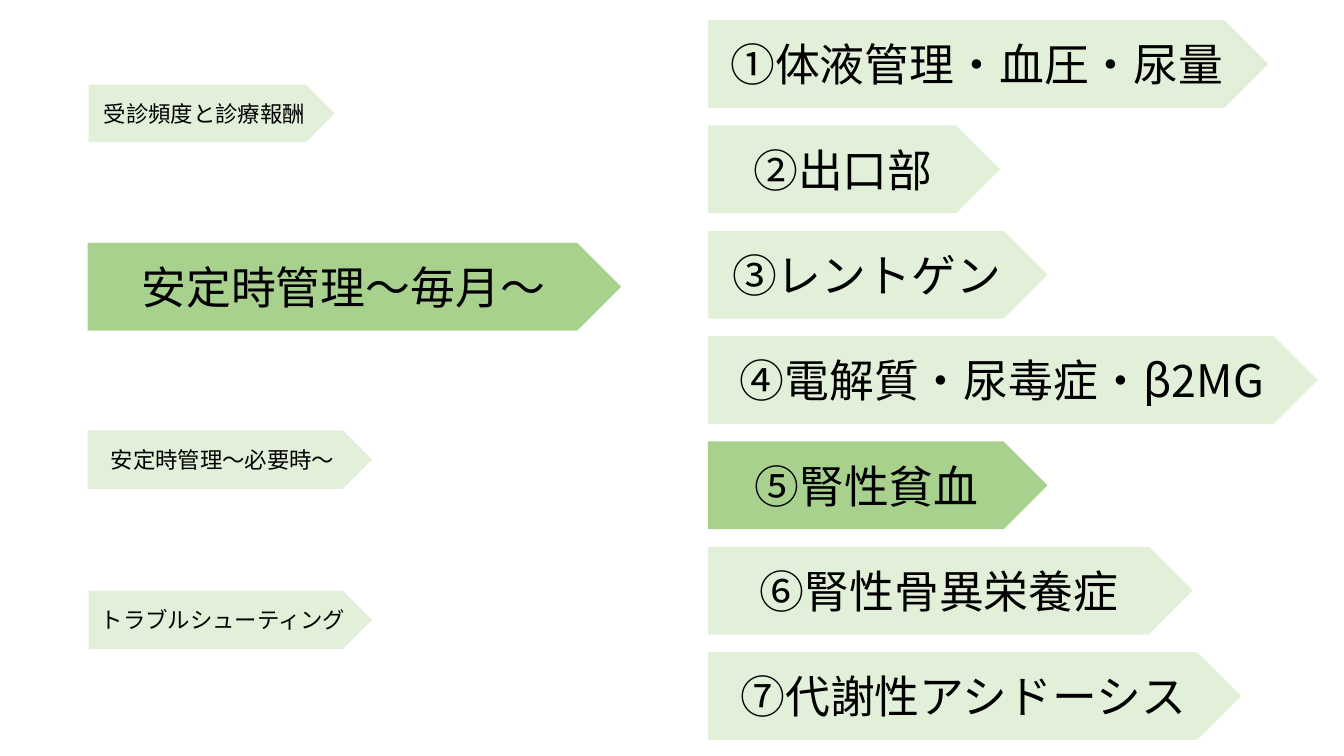
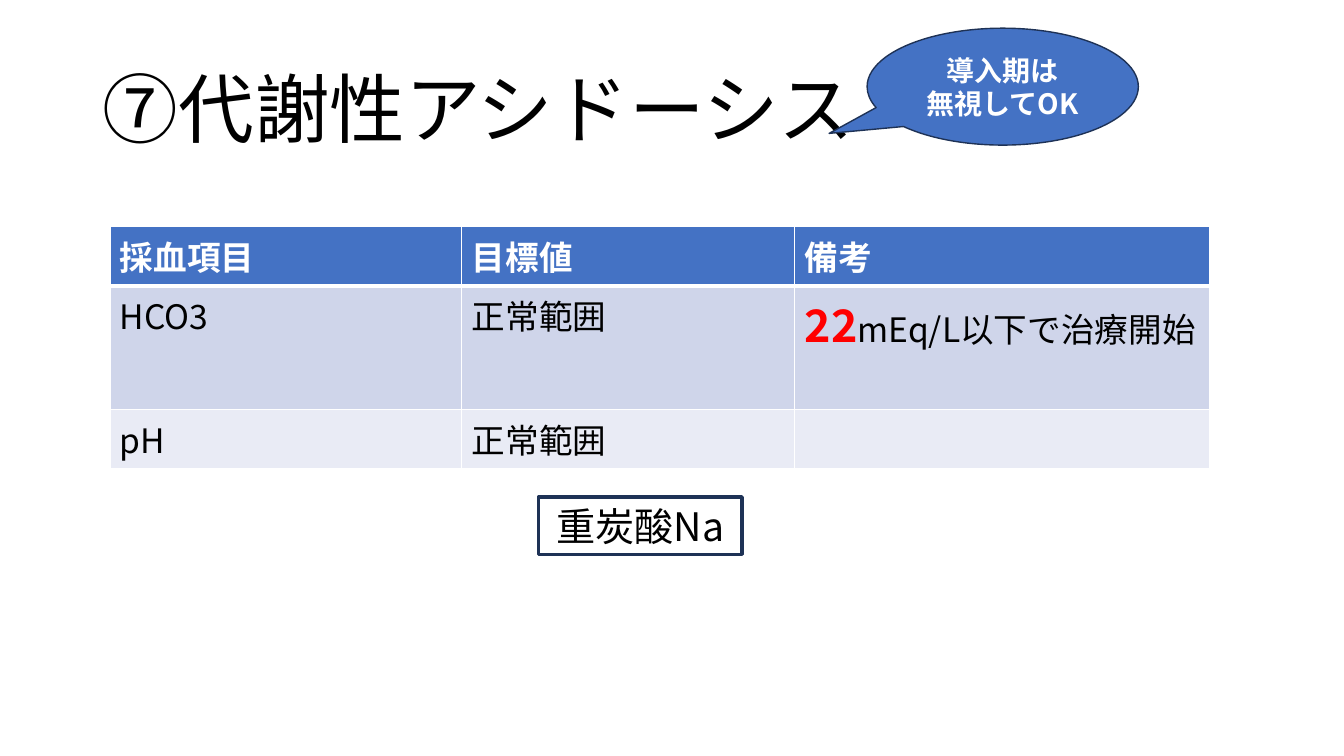
from dataclasses import dataclass

from lxml import etree
from pptx import Presentation
from pptx.dml.color import RGBColor
from pptx.enum.shapes import MSO_SHAPE
from pptx.enum.text import MSO_ANCHOR, MSO_AUTO_SIZE, PP_ALIGN
from pptx.oxml.ns import qn
from pptx.util import Inches, Pt

ARROW = MSO_SHAPE.PENTAGON
CALLOUT = MSO_SHAPE.OVAL_CALLOUT
RECTANGLE = MSO_SHAPE.RECTANGLE
LEFT, CENTER = PP_ALIGN.LEFT, PP_ALIGN.CENTER
TOP, MIDDLE = MSO_ANCHOR.TOP, MSO_ANCHOR.MIDDLE


@dataclass(frozen=True)
class Theme:
    font: str = "Noto Sans CJK JP"
    ink: str = "000000"
    white: str = "FFFFFF"
    alert: str = "FF0000"
    pale_green: str = "E2F0D9"
    green: str = "A9D18E"
    blue: str = "4472C4"
    navy: str = "1E3256"
    row_fills: tuple = ("4472C4", "CFD5EA", "E9EBF5")
    title: int = 54
    large: int = 32
    drug: int = 28
    table: int = 24
    callout: int = 20
    small: int = 16


THEME = Theme()


def write_text(frame, paragraphs, align=CENTER, anchor=MIDDLE):
    """Fill a frame; each paragraph is a list of (text, size, colour, bold) runs."""
    frame.vertical_anchor = anchor
    for index, runs in enumerate(paragraphs):
        para = frame.add_paragraph() if index else frame.paragraphs[0]
        para.alignment = align
        for text, size, color, bold in runs:
            span = para.add_run()
            span.text = text
            style = {"name": THEME.font, "size": Pt(size), "bold": bold}
            for name, value in style.items():
                setattr(span.font, name, value)
            span.font.color.rgb = RGBColor.from_string(color)
            latin = span.font._element.find(qn("a:latin"))
            east_asian = etree.Element(qn("a:ea"), typeface=THEME.font)
            latin.addnext(east_asian)


def add_box(page, kind, place, fill=None, line=None, line_width=1):
    box = page.shapes.add_shape(kind, *map(Inches, place))
    box.shadow.inherit = False
    if fill:
        box.fill.solid()
        box.fill.fore_color.rgb = RGBColor.from_string(fill)
    else:
        box.fill.background()
    if line:
        box.line.color.rgb = RGBColor.from_string(line)
        box.line.width = Pt(line_width)
    else:
        box.line.fill.background()
    return box


deck = Presentation()
deck.slide_width, deck.slide_height = Inches(13.33), Inches(7.5)
TITLE_ONLY, BLANK = deck.slide_layouts[5], deck.slide_layouts[6]
ACIDOSIS = "⑦代謝性アシドーシス"

# Slide 1: chapters on the left, topics of the current chapter on the right
page = deck.slides.add_slide(BLANK)
BAR_HEIGHT = 0.87
chapters = [
    ("受診頻度と診療報酬", (0.88, 0.84, 2.44, 0.57), False),
    ("安定時管理〜毎月〜", (0.87, 2.41, 5.29, BAR_HEIGHT), True),
    ("安定時管理〜必要時〜", (0.87, 4.27, 2.82, 0.58), False),
    ("トラブルシューティング", (0.88, 5.86, 2.81, 0.58), False),
]
topics = [
    ("①体液管理・血圧・尿量", 5.56),
    ("②出口部", 2.9),
    ("③レントゲン", 3.37),
    ("④電解質・尿毒症・β2MG", 6.05),
    ("⑤腎性貧血", 3.37),
    ("⑥腎性骨異栄養症", 4.81),
    (ACIDOSIS, 5.29),
]
CURRENT_TOPIC = "⑤腎性貧血"
FIRST_TOP, LAST_TOP = 0.2, 6.47
step = (LAST_TOP - FIRST_TOP) / (len(topics) - 1)

bars = [
    (text, place, current, THEME.large if current else THEME.small)
    for text, place, current in chapters
]
for index, (text, width) in enumerate(topics):
    place = (7.02, FIRST_TOP + index * step, width, BAR_HEIGHT)
    bars.append((text, place, text == CURRENT_TOPIC, THEME.large))

for text, place, current, size in bars:
    bar = add_box(page, ARROW, place, THEME.green if current else THEME.pale_green)
    write_text(bar.text_frame, [[(text, size, THEME.ink, False)]])

# Slide 2: metabolic acidosis
page = deck.slides.add_slide(TITLE_ONLY)
title = page.shapes.title
title_place = {"left": 0.92, "top": 0.4, "width": 11.5, "height": 1.45}
for name, value in title_place.items():
    setattr(title, name, Inches(value))
write_text(title.text_frame, [[(ACIDOSIS, THEME.title, THEME.ink, False)]], LEFT)
title.text_frame.paragraphs[0].line_spacing = 0.9

column_widths = [3.49, 3.3, 4.12]
row_heights = [0.58, 1.22, 0.58]
head = (THEME.table, THEME.white, True)
body = (THEME.table, THEME.ink, False)
rows = [
    [[("採血項目", *head)], [("目標値", *head)], [("備考", *head)]],
    [
        [("HCO3", *body)],
        [("正常範囲", *body)],
        [("22", THEME.large, THEME.alert, True), ("mEq/L以下で治療開始", *body)],
    ],
    [[("pH", *body)], [("正常範囲", *body)], []],
]
table_place = (1.09, 2.25, sum(column_widths), sum(row_heights))
table = page.shapes.add_table(
    len(rows), len(column_widths), *map(Inches, table_place)
).table
for column, width in zip(table.columns, column_widths):
    column.width = Inches(width)
for row, height in zip(table.rows, row_heights):
    row.height = Inches(height)

for row_index, row in enumerate(rows):
    for column_index, runs in enumerate(row):
        cell = table.cell(row_index, column_index)
        write_text(cell.text_frame, [runs], LEFT, TOP)
        cell.fill.solid()
        cell.fill.fore_color.rgb = RGBColor.from_string(THEME.row_fills[row_index])
        properties = cell._tc.get_or_add_tcPr()
        for position, side in enumerate(("lnL", "lnR", "lnT", "lnB")):
            under_head = (row_index, side) in ((0, "lnB"), (1, "lnT"))
            border = etree.Element(qn(f"a:{side}"), w=str(Pt(3 if under_head else 1)))
            paint = etree.SubElement(border, qn("a:solidFill"))
            etree.SubElement(paint, qn("a:srgbClr"), val=THEME.white)
            properties.insert(position, border)

drug = add_box(page, RECTANGLE, (5.34, 4.93, 2.02, 0.57), line=THEME.navy, line_width=2.5)
write_text(drug.text_frame, [[("重炭酸Na", THEME.drug, THEME.ink, False)]], anchor=TOP)
drug.text_frame.word_wrap = False
drug.text_frame.auto_size = MSO_AUTO_SIZE.SHAPE_TO_FIT_TEXT

callout = add_box(page, CALLOUT, (8.6, 0.28, 2.69, 1.16), THEME.blue, THEME.navy)
callout.adjustments[0], callout.adjustments[1] = -0.64, 0.4
callout_style = (THEME.callout, THEME.white, True)
write_text(
    callout.text_frame,
    [[(text, *callout_style)] for text in ("導入期は", "無視してOK")],
)

deck.save("out.pptx")
